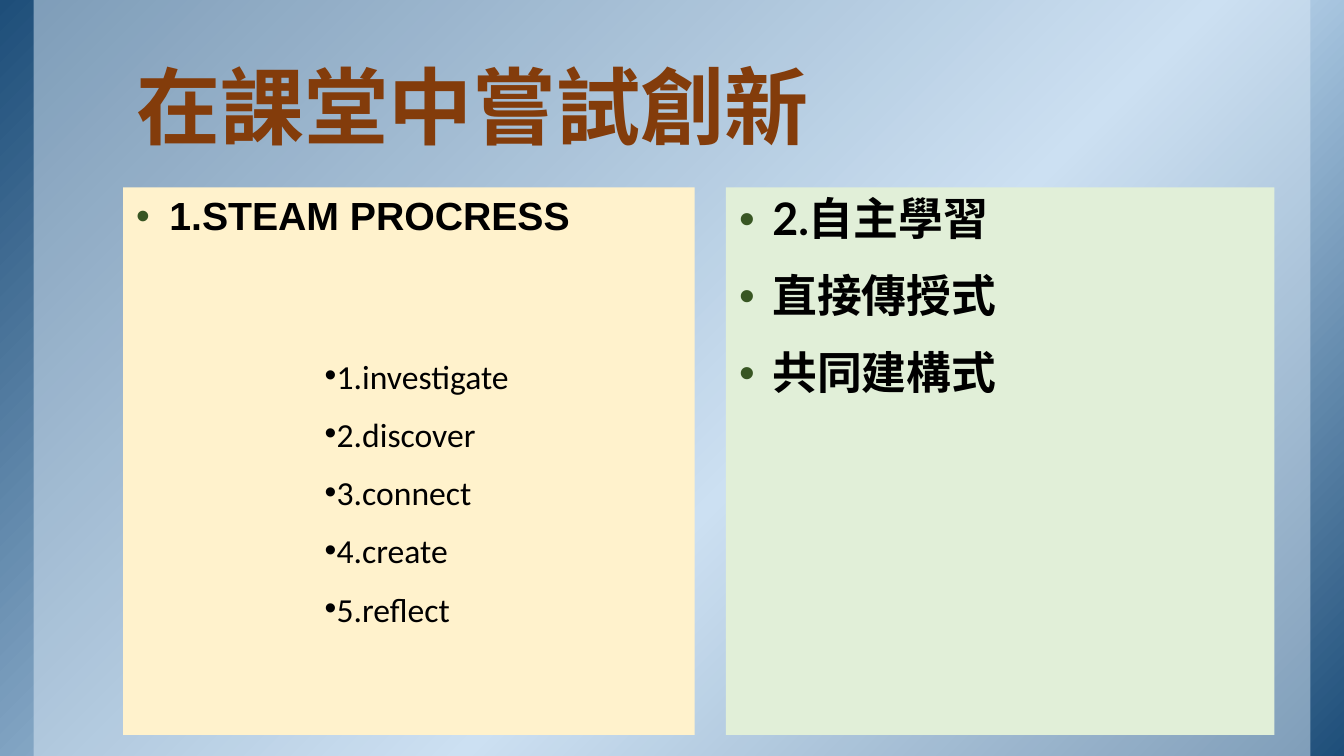
"""Build a slide comparing two ways of trying innovation in class."""
import copy
from dataclasses import dataclass

import pptx
import pptx.dml.color
import pptx.enum.dml
import pptx.enum.shapes
import pptx.enum.text
import pptx.oxml
import pptx.oxml.ns
import pptx.util

WIDTH, HEIGHT = 13.33, 7.5
PANEL_TOP, PANEL_HEIGHT = 1.86, 5.43


@dataclass(frozen=True)
class Theme:
    """Colours, fonts and type sizes of the slide."""
    edge: str = "1E4E79"
    glow: str = "BBD6EE"
    veil: str = "DDEAF6"
    heading: str = "833C0B"
    ink: str = "000000"
    bullet: str = "385623"
    cream: str = "FFF2CC"
    mint: str = "E1EFD8"
    chinese: str = "Lato"
    steam: str = "Arial"
    steps: str = "Calibri"
    heading_size: int = 60
    steam_size: int = 28
    learning_size: int = 32
    step_size: int = 24


THEME = Theme()


@dataclass(frozen=True)
class Box:
    """A rectangle in inches."""
    left: float
    top: float
    width: float
    height: float


@dataclass(frozen=True)
class Style:
    """Type and paragraph settings of a block of text."""
    font: str
    size: int
    colour: str
    bold: bool
    leading: float
    gap: float = 0
    bullet: str = ""
    indent: float = 0


@dataclass(frozen=True)
class Panel:
    """A coloured body with its bullet lines."""
    box: Box
    fill: str
    lines: tuple[str, ...]
    style: Style


HEADING = Style(THEME.chinese, THEME.heading_size, THEME.heading, True, 0.85)
STEPS = Style(THEME.steps, THEME.step_size, THEME.ink, False, 0.75, 20, THEME.ink, 0.12)
PANELS = (
    Panel(Box(1.22, PANEL_TOP, 5.67, PANEL_HEIGHT), THEME.cream, ("1.STEAM PROCRESS",),
          Style(THEME.steam, THEME.steam_size, THEME.ink, True, 0.95, 0, THEME.bullet, 0.33)),
    Panel(Box(7.2, PANEL_TOP, 5.44, PANEL_HEIGHT), THEME.mint,
          ("2.自主學習", "直接傳授式", "共同建構式"),
          Style(THEME.chinese, THEME.learning_size, THEME.ink, True, 0.95, 18.7,
                THEME.bullet, 0.33)),
)
STEP_LINES = ("1.investigate", "2.discover", "3.connect", "4.create", "5.reflect")


def rgb(colour: str) -> pptx.dml.color.RGBColor:
    """Turn a hex string into a colour."""
    return pptx.dml.color.RGBColor.from_string(colour)


def place(shape, box: Box) -> None:
    """Move and size a shape."""
    shape.left, shape.top, shape.width, shape.height = (
        pptx.util.Inches(length) for length in (box.left, box.top, box.width, box.height))


def add_child(parent, tag: str, **attributes: str):
    """Append a drawing element to a parent element."""
    child = pptx.oxml.parse_xml(f"<a:{tag} {pptx.oxml.ns.nsdecls('a')}/>")
    for name, setting in attributes.items():
        child.set(name, setting)
    parent.append(child)
    return child


def add_backdrop(slide, box: Box, depth: int):
    """Add an outline-free rectangle at a given depth behind the text."""
    backdrop = slide.shapes.add_shape(
        pptx.enum.shapes.MSO_SHAPE.RECTANGLE,
        *(pptx.util.Inches(n) for n in (box.left, box.top, box.width, box.height)))
    backdrop.shadow.inherit = False
    backdrop.line.fill.background()
    slide.shapes._spTree.insert(2 + depth, backdrop._element)
    return backdrop


def paint_background(slide) -> None:
    """Lay the diagonal gradient and the pale veil over it."""
    sky = add_backdrop(slide, Box(0, 0, WIDTH, HEIGHT), 0)
    sky.fill.gradient()
    sky.fill.gradient_angle = 315
    stop_list = sky._element.spPr.find(".//" + pptx.oxml.ns.qn("a:gsLst"))
    stop_list.append(copy.deepcopy(stop_list[-1]))
    stops = ((0, THEME.edge), (0.58, THEME.glow), (1, THEME.edge))
    for stop, (position, colour) in zip(sky.fill.gradient_stops, stops):
        stop.position = position
        stop.color.rgb = rgb(colour)

    margin = WIDTH / 40
    veil = add_backdrop(slide, Box(margin, 0, WIDTH - 2 * margin, HEIGHT), 1)
    veil.fill.solid()
    veil.fill.fore_color.rgb = rgb(THEME.veil)
    tint = veil._element.spPr.find(".//" + pptx.oxml.ns.qn("a:srgbClr"))
    add_child(tint, "alpha", val="50000")


def write(frame, lines: tuple[str, ...], style: Style,
          inset: tuple[float, float], anchor) -> None:
    """Fill a text frame with one styled paragraph per line."""
    frame.word_wrap = True
    frame.auto_size = pptx.enum.text.MSO_AUTO_SIZE.NONE
    frame.vertical_anchor = anchor
    frame.margin_left = frame.margin_right = pptx.util.Inches(inset[0])
    frame.margin_top = frame.margin_bottom = pptx.util.Inches(inset[1])
    for number, line in enumerate(lines):
        paragraph = frame.add_paragraph() if number else frame.paragraphs[0]
        paragraph.alignment = pptx.enum.text.PP_ALIGN.LEFT
        paragraph.line_spacing = style.leading
        paragraph.space_before = pptx.util.Pt(style.gap if number else 0)
        paragraph.space_after = pptx.util.Pt(0)
        if style.bullet:
            properties = paragraph._p.get_or_add_pPr()
            indent = pptx.util.Inches(style.indent)
            properties.set("marL", str(indent))
            properties.set("indent", str(-indent))
            add_child(add_child(properties, "buClr"), "srgbClr", val=style.bullet)
            add_child(properties, "buFont", typeface="Arial")
            add_child(properties, "buChar", char="•")
        run = paragraph.add_run()
        run.text = line
        run.font.name = style.font
        run.font.size = pptx.util.Pt(style.size)
        run.font.bold = style.bold
        run.font.color.rgb = rgb(style.colour)
        if style.font == THEME.chinese:
            run._r.rPr.set("lang", "zh-TW")
            add_child(run._r.rPr, "ea", typeface=style.font)


def main() -> None:
    """Assemble and save the slide."""
    deck = pptx.Presentation()
    deck.slide_width = pptx.util.Inches(WIDTH)
    deck.slide_height = pptx.util.Inches(HEIGHT)
    slide = deck.slides.add_slide(deck.slide_layouts.get_by_name("Two Content"))
    paint_background(slide)

    anchors = pptx.enum.text.MSO_ANCHOR
    heading = slide.shapes.title
    place(heading, Box(1.22, 0.08, 11.11, 1.53))
    write(heading.text_frame, ("在課堂中嘗試創新",), HEADING, (0.13, 0.07), anchors.BOTTOM)

    for index, panel in enumerate(PANELS, start=1):
        body = slide.placeholders[index]
        place(body, panel.box)
        body.fill.solid()
        body.fill.fore_color.rgb = rgb(panel.fill)
        write(body.text_frame, panel.lines, panel.style, (0.13, 0.07), anchors.TOP)

    steps = slide.shapes.add_textbox(0, 0, 0, 0)
    place(steps, Box(3.22, 3.62, 3.4, 2.7))
    write(steps.text_frame, STEP_LINES, STEPS, (0, 0), anchors.TOP)
    deck.save("out.pptx")


if __name__ == "__main__":
    main()
